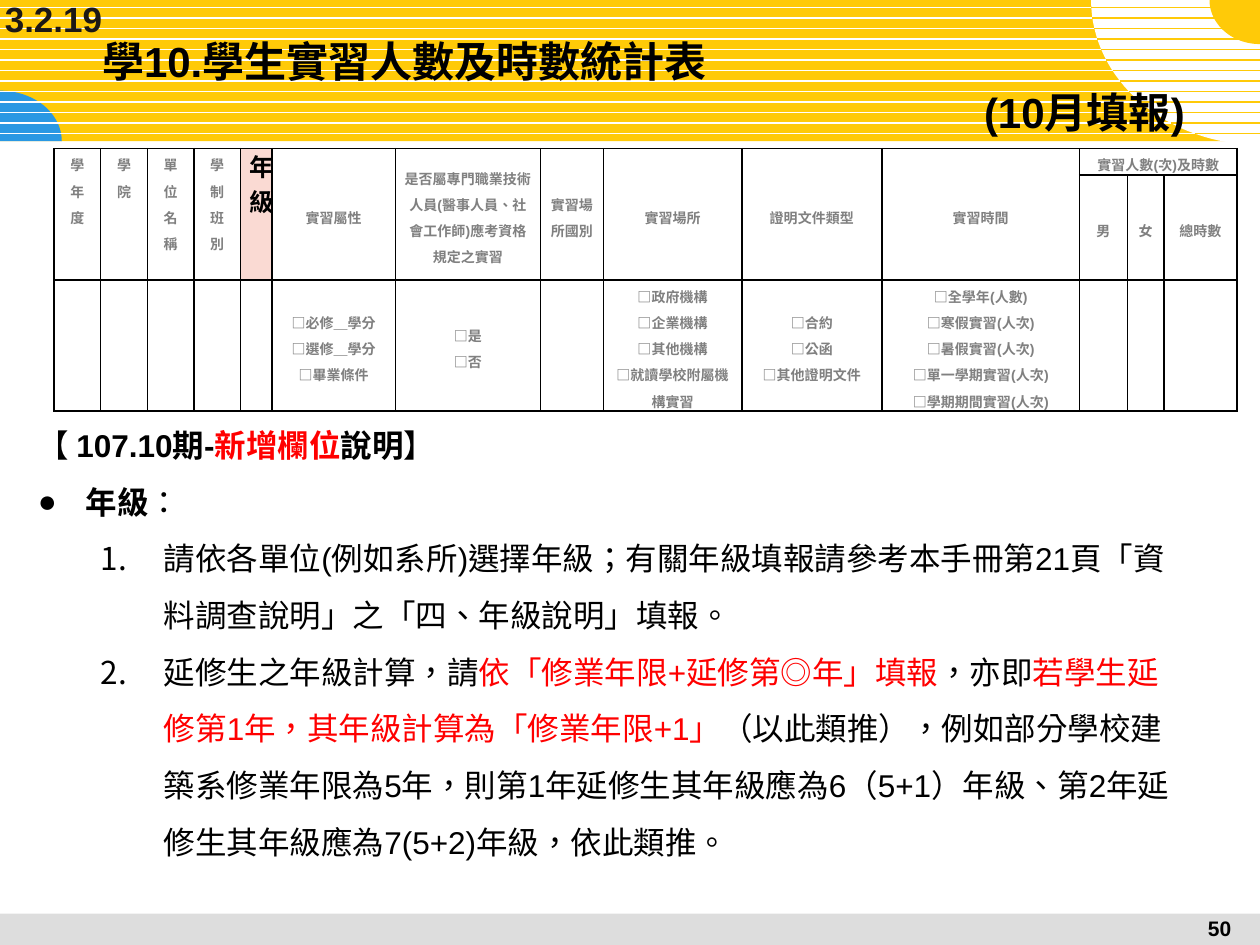
"""Build the slide on reporting student internship numbers and hours."""
from dataclasses import dataclass
from math import cos, pi, sin, sqrt

from lxml.etree import SubElement
from pptx import Presentation
from pptx.dml.color import RGBColor
from pptx.enum.lang import MSO_LANGUAGE_ID as Language
from pptx.enum.shapes import MSO_CONNECTOR as Connector, MSO_SHAPE as Preset
from pptx.enum.text import MSO_ANCHOR as Anchor, MSO_AUTO_SIZE as AutoSize, PP_ALIGN as Align
from pptx.oxml.ns import qn
from pptx.util import Inches, Pt

COLORS = {
    "yellow": "FFCA08", "blue": "2998E3", "white": "FFFFFF", "footer": "DDDDDD",
    "black": "000000", "red": "FF0000", "gray": "808080", "pink": "FADAD3", "ink": "1C1815",
}
COLUMN_WIDTHS = [0.37] * 4 + [0.25, 0.98, 1.15, 0.5, 1.1, 1.11, 1.57, 0.38, 0.29, 0.58]
ROW_HEIGHTS = [0.18, 0.36, 0.63]
HEADERS = [
    "學年度", "學院", "單位名稱", "學制班別", "年級", "實習屬性",
    "是否屬專門職業技術人員(醫事人員、社會工作師)應考資格規定之實習",
    "實習場所國別", "實習場所", "證明文件類型", "實習時間",
]
COUNT_HEADERS = ["男", "女", "總時數"]
GRADE_COLUMN = HEADERS.index("年級")
OPTIONS = {
    5: ["□必修＿學分", "□選修＿學分", "□畢業條件"],
    6: ["□是", "□否"],
    8: ["□政府機構", "□企業機構", "□其他機構", "□就讀學校附屬機構實習"],
    9: ["□合約", "□公函", "□其他證明文件"],
    10: ["□全學年(人數)", "□寒假實習(人次)", "□暑假實習(人次)",
         "□單一學期實習(人次)", "□學期期間實習(人次)"],
}


@dataclass
class Corner:
    """A quarter ellipse, spreading from its centre over one quarter turn."""
    center_x: float
    center_y: float
    radius_x: float
    radius_y: float
    quarter: int
    color: str


@dataclass
class Piece:
    """A stretch of text in one format."""
    text: str
    color: str = "black"
    bold: bool = False


@dataclass
class Item:
    """A body paragraph with its bullet and indents."""
    pieces: list[Piece]
    bullet: str = "buNone"
    value: str = ""
    level: int = 0
    margin: float = 0
    hanging: float = 0


BLUE_CORNER = Corner(0, 1.12, 0.49, 0.4, 3, "blue")
WHITE_CORNER = Corner(10, 0, 1.34, 1.15, 1, "white")
SUN_CORNER = Corner(10, 0, 0.4, 0.35, 1, "yellow")
ITEMS = [
    Item([Piece("【 "), Piece("107.10期-", bold=True), Piece("新增欄位", "red", True),
          Piece("說明", bold=True), Piece("】")]),
    Item([Piece("年級", bold=True), Piece("：")], "buChar", "●", 0, 0.38, 0.38),
    Item([Piece("請依各單位(例如系所)選擇年級；有關年級填報請參考本手冊第21頁"
                "「資料調查說明」之「四、年級說明」填報。")],
         "buAutoNum", "arabicPeriod", 1, 1, 0.5),
    Item([Piece("延修生之年級計算，請"), Piece("依「修業年限+延修第◎年」填報", "red"),
          Piece("，亦即"), Piece("若學生延修第1年，其年級計算為「修業年限+1」", "red"),
          Piece("（以此類推），例如部分學校建築系修業年限為5年，則第1年延修生其年級應為6（5+1）年級、"
                "第2年延修生其年級應為7(5+2)年級，依此類推。")],
         "buAutoNum", "arabicPeriod", 1, 1, 0.5),
]


def rgb(name: str) -> RGBColor:
    return RGBColor.from_string(COLORS[name])


def style_font(font, size: float, color: str, bold: bool) -> None:
    font.name, font.size, font.bold = "Arial", Pt(size), bold
    font.language_id = Language.TRADITIONAL_CHINESE
    font.color.rgb = rgb(color)


def paint(shape, color: str) -> None:
    shape.fill.solid()
    shape.fill.fore_color.rgb = rgb(color)
    shape.line.fill.background()
    shape.shadow.inherit = False


def place(shape, left: float, top: float, width: float, height: float) -> None:
    shape.left, shape.top = Inches(left), Inches(top)
    shape.width, shape.height = Inches(width), Inches(height)


def add_band(slide, top: float, height: float, color: str) -> None:
    paint(slide.shapes.add_shape(Preset.RECTANGLE, 0, Inches(top), Inches(10), Inches(height)), color)


def add_corner(slide, corner: Corner) -> None:
    angles = [(corner.quarter + step / 32) * pi / 2 for step in range(33)]
    points = [(Inches(corner.center_x + corner.radius_x * cos(angle)),
               Inches(corner.center_y + corner.radius_y * sin(angle))) for angle in angles]
    builder = slide.shapes.build_freeform(Inches(corner.center_x), Inches(corner.center_y))
    builder.add_line_segments(points, close=True)
    paint(builder.convert_to_shape(), corner.color)


def add_stripe(slide, start: float, y: float, color: str, width: float) -> None:
    line = slide.shapes.add_connector(Connector.STRAIGHT, Inches(start), Inches(y), Inches(10), Inches(y))
    line.line.color.rgb = rgb(color)
    line.line.width = Pt(width)
    SubElement(line.element.spPr, qn("a:effectLst"))


def add_background(slide) -> None:
    levels = [0.06 + step / 12 for step in range(13)]
    add_band(slide, 0, 1.12, "yellow")
    add_corner(slide, BLUE_CORNER)
    for y in levels:
        add_stripe(slide, 0, y, "white", 1)
    add_corner(slide, WHITE_CORNER)
    for y in levels:
        reach = WHITE_CORNER.radius_x * sqrt(1 - (y / WHITE_CORNER.radius_y) ** 2)
        add_stripe(slide, 10 - reach, y, "yellow", 0.75)
    add_band(slide, 7.25, 0.25, "footer")
    add_corner(slide, SUN_CORNER)


def add_label(slide, text: str, box: tuple, size: float, color: str, align: Align,
              margin_right: float = 0.1) -> None:
    label = slide.shapes.add_textbox(*map(Inches, box))
    label.text_frame.word_wrap = True
    label.text_frame.margin_right = Inches(margin_right)
    paragraph = label.text_frame.paragraphs[0]
    paragraph.text, paragraph.alignment = text, align
    style_font(paragraph.font, size, color, True)


def fill_title(title) -> None:
    place(title, 0.71, 0.25, 9.09, 0.87)
    frame = title.text_frame
    frame.auto_size, frame.vertical_anchor = AutoSize.NONE, Anchor.MIDDLE
    paragraph = frame.paragraphs[0]
    paragraph.text = "學10.學生實習人數及時數統計表\v\t(10月填報)"
    paragraph.alignment = Align.LEFT
    style_font(paragraph.font, 24, "black", True)
    tabs = SubElement(paragraph._p.get_or_add_pPr(), qn("a:tabLst"))
    tabs.getparent().insert(0, tabs)
    SubElement(tabs, qn("a:tab"), pos=str(Inches(7)), algn="l")


def fill_body(body) -> None:
    place(body, 0.2, 3.18, 9.34, 3.74)
    frame = body.text_frame
    frame.auto_size, frame.vertical_anchor = AutoSize.NONE, Anchor.TOP
    for index, item in enumerate(ITEMS):
        paragraph = frame.add_paragraph() if index else frame.paragraphs[0]
        paragraph.level, paragraph.line_spacing = item.level, 1.5
        paragraph.space_before = Pt(0)
        paragraph.alignment = Align.LEFT if index else Align.JUSTIFY
        properties = paragraph._p.get_or_add_pPr()
        properties.set("marL", str(Inches(item.margin)))
        properties.set("indent", str(Inches(-item.hanging)))
        bullet = SubElement(properties, qn(f"a:{item.bullet}"))
        if item.value:
            bullet.set("char" if item.bullet == "buChar" else "type", item.value)
        for piece in item.pieces:
            run = paragraph.add_run()
            run.text = piece.text
            style_font(run.font, 18, piece.color, piece.bold)


def write_cell(cell, lines: list[str], anchor: Anchor = Anchor.MIDDLE, grade: bool = False,
               margin: float = 0.07) -> None:
    cell.margin_left = cell.margin_right = Inches(margin)
    cell.margin_top = cell.margin_bottom = 0
    cell.vertical_anchor = anchor
    cell.text = "\n".join(lines)
    for paragraph in cell.text_frame.paragraphs:
        paragraph.alignment, paragraph.line_spacing = Align.CENTER, Pt(20 if grade else 15)
        style_font(paragraph.font, 14 if grade else 8, "black" if grade else "gray", True)


def format_cell(cell) -> None:
    properties = cell._tc.get_or_add_tcPr()
    for side in ("lnL", "lnR", "lnT", "lnB"):
        border = SubElement(properties, qn(f"a:{side}"), w=str(Pt(1)))
        SubElement(SubElement(border, qn("a:solidFill")), qn("a:srgbClr"), val=COLORS["black"])
    cell.fill.background()


def add_internship_table(slide) -> None:
    frame = slide.shapes.add_table(len(ROW_HEIGHTS), len(COLUMN_WIDTHS), 0, 0, Inches(9.37), Inches(1.88))
    table = frame.table
    table.first_row = table.horz_banding = False
    for column, width in zip(table.columns, COLUMN_WIDTHS):
        column.width = Inches(width)
    for row, height in zip(table.rows, ROW_HEIGHTS):
        row.height = Inches(height)
    place(frame, 0.43, 1.18, 9.37, 1.88)
    for cell in table.iter_cells():
        format_cell(cell)
    for column, header in enumerate(HEADERS):
        table.cell(0, column).merge(table.cell(1, column))
        anchor = Anchor.TOP if column <= GRADE_COLUMN else Anchor.MIDDLE
        margin = 0.08 if column < GRADE_COLUMN else 0.07
        write_cell(table.cell(0, column), [header], anchor, column == GRADE_COLUMN, margin)
    grade_fill = table.cell(0, GRADE_COLUMN).fill
    grade_fill.solid()
    grade_fill.fore_color.rgb = rgb("pink")
    first_count = len(HEADERS)
    table.cell(0, first_count).merge(table.cell(0, len(COLUMN_WIDTHS) - 1))
    write_cell(table.cell(0, first_count), ["實習人數(次)及時數"])
    for column, header in enumerate(COUNT_HEADERS, first_count):
        write_cell(table.cell(1, column), [header])
    for column, lines in OPTIONS.items():
        write_cell(table.cell(2, column), lines)


def main() -> None:
    presentation = Presentation()
    presentation.slide_width, presentation.slide_height = Inches(10), Inches(7.5)
    slide = presentation.slides.add_slide(presentation.slide_layouts[1])
    title, body = slide.placeholders
    add_background(slide)
    add_label(slide, "50", (9.36, 7.22, 0.64, 0.28), 12, "black", Align.CENTER)
    fill_body(body)
    fill_title(title)
    for placeholder in (body, title):
        placeholder.element.getparent().append(placeholder.element)
    add_internship_table(slide)
    add_label(slide, "3.2.19", (-0.06, -0.07, 0.97, 0.44), 20, "ink", Align.LEFT, 0)
    presentation.save("out.pptx")


if __name__ == "__main__":
    main()
